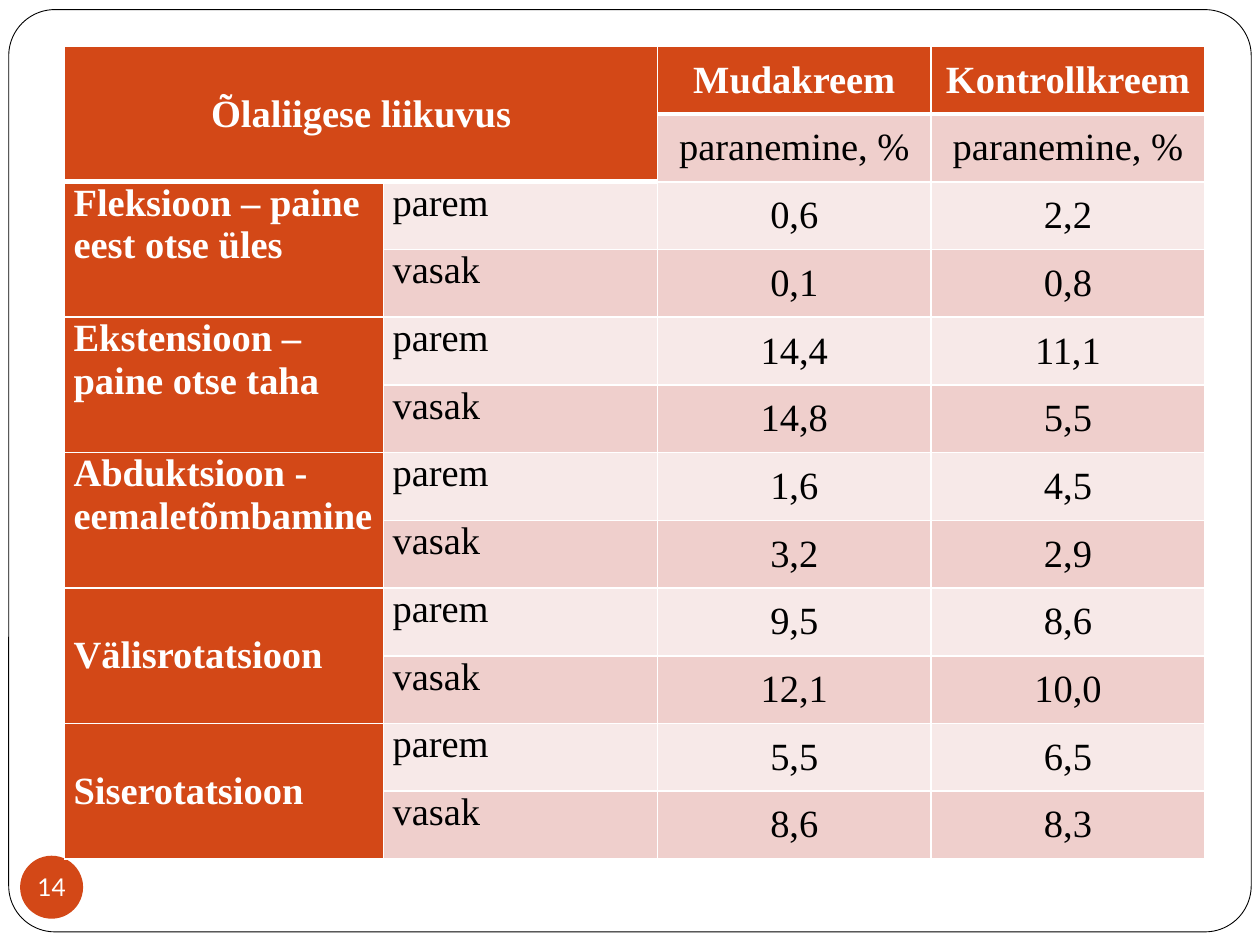
from dataclasses import dataclass

from lxml import etree
from pptx import Presentation
from pptx.dml.color import RGBColor
from pptx.enum.shapes import MSO_SHAPE
from pptx.enum.text import MSO_ANCHOR, PP_ALIGN
from pptx.oxml.ns import qn
from pptx.util import Pt

ROUNDED, OVAL = MSO_SHAPE.ROUNDED_RECTANGLE, MSO_SHAPE.OVAL
TOP, MIDDLE = MSO_ANCHOR.TOP, MSO_ANCHOR.MIDDLE
LEFT, CENTER = PP_ALIGN.LEFT, PP_ALIGN.CENTER


@dataclass(frozen=True)
class Theme:
    accent: str = "D34817"
    light: str = "F7E9E8"
    dark: str = "EFCFCC"
    paper: str = "FFFFFF"
    ink: str = "000000"
    table_font: str = "Times New Roman"
    number_font: str = "Lato"
    table_size: float = 22
    number_size: float = 14
    thin: float = 1
    thick: float = 3


THEME = Theme()
COLUMN_WIDTHS = (182.3, 156.4, 156.4, 156.4)
CELL_MARGIN = 5.1
HEADER_ROWS = 2
TITLE = "Õlaliigese liikuvus"
CREAMS = ("Mudakreem", "Kontrollkreem")
MEASURE = "paranemine, %"
SIDES = ("parem", "vasak")
# Movement, its vertical anchor, then one row of values for each side
MOVEMENTS = (
    ("Fleksioon – paine eest otse üles", TOP, (("0,6", "2,2"), ("0,1", "0,8"))),
    ("Ekstensioon – paine otse taha", TOP, (("14,4", "11,1"), ("14,8", "5,5"))),
    ("Abduktsioon - eemaletõmbamine", TOP, (("1,6", "4,5"), ("3,2", "2,9"))),
    ("Välisrotatsioon", MIDDLE, (("9,5", "8,6"), ("12,1", "10,0"))),
    ("Siserotatsioon", MIDDLE, (("5,5", "6,5"), ("8,6", "8,3"))),
)


def rgb(color):
    return RGBColor.from_string(color)


def add_text(para, text, font, size, color, bold=False):
    span = para.add_run()
    span.text = text
    span.font.name = font
    span.font.size = Pt(size)
    span.font.color.rgb = rgb(color)
    span.font.bold = bold


def add_panel(page, kind, box, fill):
    panel = page.shapes.add_shape(kind, *map(Pt, box))
    panel.shadow.inherit = False
    panel.fill.solid()
    panel.fill.fore_color.rgb = rgb(fill)
    panel.line.fill.background()
    return panel


def add_frame(page, box):
    frame = add_panel(page, ROUNDED, box, THEME.paper)
    frame.adjustments[0] = 0.05
    frame.line.color.rgb = rgb(THEME.ink)
    frame.line.width = Pt(0.5)


def add_page_number(page, box, number):
    badge = add_panel(page, OVAL, box, THEME.accent)
    text = badge.text_frame
    text.margin_left = text.margin_right = text.margin_top = text.margin_bottom = 0
    text.word_wrap = False
    text.vertical_anchor = MIDDLE
    para = text.paragraphs[0]
    para.alignment = CENTER
    add_text(para, number, THEME.number_font, THEME.number_size, THEME.paper)


def is_heading(row, column):
    return row == 0 or (row < HEADER_ROWS and column < 2)


def set_borders(cell, row, column):
    below_heading = row > 0 and is_heading(row - 1, column)
    widths = {
        "a:lnL": THEME.thin,
        "a:lnR": THEME.thin,
        "a:lnT": THEME.thick if below_heading else THEME.thin,
        "a:lnB": THEME.thick if is_heading(row, column) else THEME.thin,
    }
    properties = cell._tc.get_or_add_tcPr()
    for tag, width in widths.items():
        line = etree.SubElement(properties, qn(tag), w=str(Pt(width)))
        fill = etree.SubElement(line, qn("a:solidFill"))
        etree.SubElement(fill, qn("a:srgbClr"), val=THEME.paper)


def paint_cell(cell, row, column):
    set_borders(cell, row, column)
    if is_heading(row, column) or column == 0:
        color = THEME.accent
    else:
        color = THEME.dark if row % 2 else THEME.light
    cell.fill.solid()
    cell.fill.fore_color.rgb = rgb(color)
    cell.margin_left = cell.margin_right = Pt(CELL_MARGIN)
    cell.margin_top = cell.margin_bottom = 0


def write_cell(cell, text, strong=False, alignment=CENTER, anchor=MIDDLE):
    cell.vertical_anchor = anchor
    para = cell.text_frame.paragraphs[0]
    para.alignment = alignment
    color = THEME.paper if strong else THEME.ink
    add_text(para, text, THEME.table_font, THEME.table_size, color, strong)


def add_results_table(page, box):
    row_count = HEADER_ROWS + len(MOVEMENTS) * len(SIDES)
    holder = page.shapes.add_table(row_count, len(COLUMN_WIDTHS), *map(Pt, box))
    table = holder.table
    for column, width in zip(table.columns, COLUMN_WIDTHS):
        column.width = Pt(width)
    for row in range(row_count):
        table.rows[row].height = Pt(box[3] / row_count)
        for column in range(len(COLUMN_WIDTHS)):
            paint_cell(table.cell(row, column), row, column)

    table.cell(0, 0).merge(table.cell(1, 1))
    write_cell(table.cell(0, 0), TITLE, strong=True)
    for column, cream in enumerate(CREAMS, 2):
        write_cell(table.cell(0, column), cream, strong=True)
        write_cell(table.cell(1, column), MEASURE)

    for index, (movement, anchor, results) in enumerate(MOVEMENTS):
        first = HEADER_ROWS + index * len(SIDES)
        name_cell = table.cell(first, 0)
        name_cell.merge(table.cell(first + len(SIDES) - 1, 0))
        write_cell(name_cell, movement, True, LEFT, anchor)
        for row, (side, values) in enumerate(zip(SIDES, results), first):
            write_cell(table.cell(row, 1), side, alignment=LEFT, anchor=TOP)
            for column, value in enumerate(values, 2):
                write_cell(table.cell(row, column), value)


def main():
    deck = Presentation()
    deck.slide_width, deck.slide_height = Pt(720), Pt(540)
    page = deck.slides.add_slide(deck.slide_layouts[6])
    add_frame(page, (5, 5.5, 710, 527))
    add_page_number(page, (11.5, 489, 36, 36), "14")
    add_results_table(page, (37, 26.5, sum(COLUMN_WIDTHS), 464.4))
    deck.save("out.pptx")


if __name__ == "__main__":
    main()
